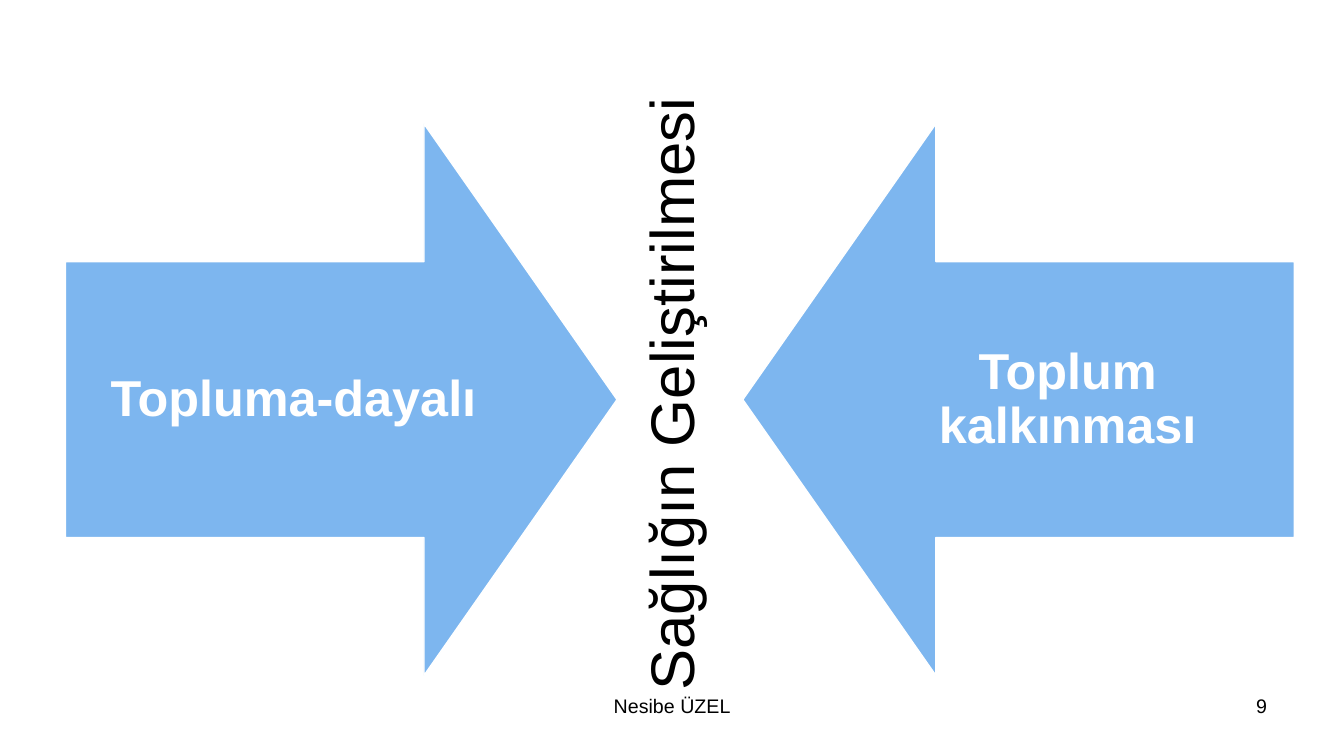
from dataclasses import dataclass

from pptx import Presentation
from pptx.dml.color import RGBColor
from pptx.enum.shapes import MSO_SHAPE
from pptx.enum.text import MSO_ANCHOR, MSO_AUTO_SIZE, PP_ALIGN
from pptx.shapes.autoshape import Shape
from pptx.slide import Slide
from pptx.util import Cm, Pt

DOWN_ARROW = MSO_SHAPE.DOWN_ARROW
RECTANGLE = MSO_SHAPE.RECTANGLE
TOP, MIDDLE = MSO_ANCHOR.TOP, MSO_ANCHOR.MIDDLE
LEFT, CENTER, RIGHT = PP_ALIGN.LEFT, PP_ALIGN.CENTER, PP_ALIGN.RIGHT
FIT_SHAPE = MSO_AUTO_SIZE.SHAPE_TO_FIT_TEXT

WHITE, BLACK, SKY_BLUE = "FFFFFF", "000000", "7DB6EF"
FONT = "Arial"
ARROW_TOP, ARROW_SIZE = 3.12, 13.9
LABEL_TOP, LABEL_WIDTH, LABEL_HEIGHT, LABEL_INSET = 6.6, 11.5, 6.96, 0.71
FOOTER_TOP, FOOTER_HEIGHT = 17.35, 1.32


@dataclass
class Force:
    text: str
    arrow_left: float
    label_left: float
    rotation: int


@dataclass
class FooterItem:
    text: str
    left: float
    width: float
    alignment: PP_ALIGN


FORCES = [
    Force("Topluma-dayalı", 1.65, 1.65, 270),
    Force("Toplum kalkınması", 18.72, 21.16, 90),
]
FOOTER_ITEMS = [
    FooterItem("Nesibe ÜZEL", 11.58, 10.72, CENTER),
    FooterItem("9", 24.28, 7.9, RIGHT),
]


def color(value: str) -> RGBColor:
    return RGBColor.from_string(value)


def write_text(shape: Shape, text: str, size: int, font_color: str,
               alignment: PP_ALIGN, bold: bool = False) -> None:
    paragraph = shape.text_frame.paragraphs[0]
    paragraph.alignment = alignment
    run = paragraph.add_run()
    run.text = text
    run.font.name = FONT
    run.font.size = Pt(size)
    run.font.bold = bold
    run.font.color.rgb = color(font_color)


def add_text_box(slide: Slide, left: float, top: float,
                 width: float, height: float) -> Shape:
    text_box = slide.shapes.add_textbox(Cm(left), Cm(top), Cm(width), Cm(height))
    text_box.text_frame.word_wrap = True
    return text_box


def add_force(slide: Slide, force: Force) -> None:
    arrow = slide.shapes.add_shape(DOWN_ARROW, Cm(force.arrow_left), Cm(ARROW_TOP),
                                   Cm(ARROW_SIZE), Cm(ARROW_SIZE))
    arrow.rotation = force.rotation
    arrow.adjustments[0] = 0.5
    arrow.adjustments[1] = 0.35
    arrow.shadow.inherit = False
    arrow.fill.solid()
    arrow.fill.fore_color.rgb = color(SKY_BLUE)
    arrow.line.color.rgb = color(WHITE)
    arrow.line.width = Pt(1)

    label = add_text_box(slide, force.label_left, LABEL_TOP, LABEL_WIDTH, LABEL_HEIGHT)
    frame = label.text_frame
    frame.vertical_anchor = MIDDLE
    frame.margin_left = frame.margin_right = Cm(LABEL_INSET)
    frame.margin_top = frame.margin_bottom = Cm(LABEL_INSET)
    write_text(label, force.text, 36, WHITE, CENTER, bold=True)
    frame.paragraphs[0].line_spacing = 0.9


def add_vertical_heading(slide: Slide, text: str) -> None:
    heading = slide.shapes.add_shape(RECTANGLE, Cm(15.82), Cm(2.87), Cm(2.39), Cm(14.78))
    heading.shadow.inherit = False
    heading.fill.solid()
    heading.fill.fore_color.rgb = color(WHITE)
    heading.line.fill.background()
    frame = heading.text_frame
    frame.word_wrap = False
    frame.auto_size = FIT_SHAPE
    frame.vertical_anchor = TOP
    frame._txBody.bodyPr.set("vert", "vert270")
    write_text(heading, text, 44, BLACK, LEFT)


def add_footer_item(slide: Slide, item: FooterItem) -> None:
    text_box = add_text_box(slide, item.left, FOOTER_TOP, item.width, FOOTER_HEIGHT)
    write_text(text_box, item.text, 14, BLACK, item.alignment)


def main() -> None:
    presentation = Presentation()
    presentation.slide_width = Cm(33.87)
    presentation.slide_height = Cm(19.05)
    slide = presentation.slides.add_slide(presentation.slide_layouts[6])
    for force in FORCES:
        add_force(slide, force)
    add_vertical_heading(slide, "Sağlığın Geliştirilmesi")
    for item in FOOTER_ITEMS:
        add_footer_item(slide, item)
    presentation.save("out.pptx")


if __name__ == "__main__":
    main()
